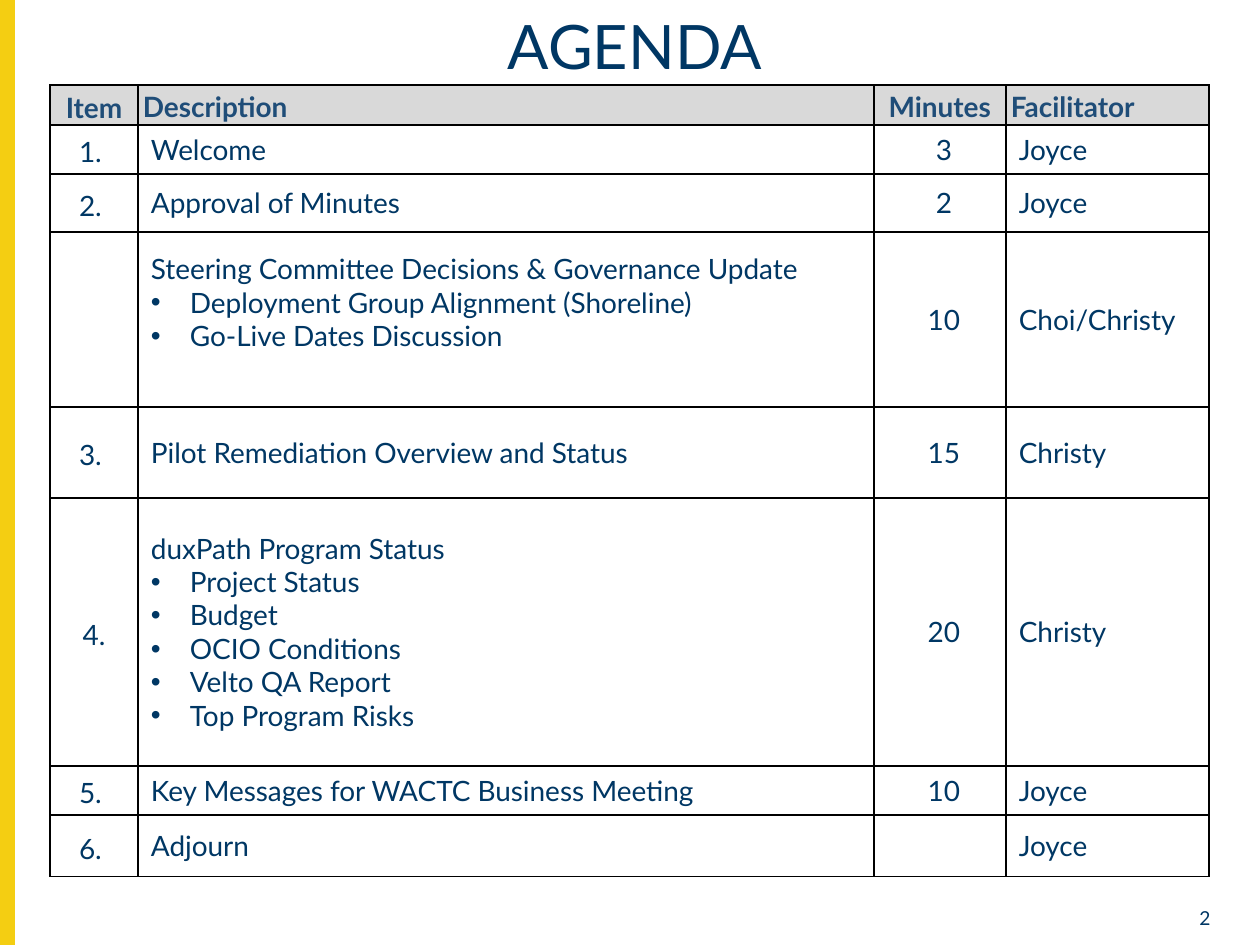
from lxml.etree import SubElement
from pptx import Presentation
from pptx.dml.color import RGBColor
from pptx.enum.shapes import MSO_SHAPE as SHAPE
from pptx.enum.text import MSO_ANCHOR as ANCHOR, PP_ALIGN as ALIGN
from pptx.oxml.ns import qn
from pptx.util import Emu, Pt

EMU_PER_PX = 914400 / 126
NAVY = "003764"
YELLOW = "F4CE12"
HEADER = {"size": Pt(16), "name": "Lato", "bold": True, "color": "1F4D78"}
BODY = {"size": Pt(16), "name": "Lato", "bold": False, "color": NAVY}
TITLE = {"size": Pt(35), "name": "Lato", "color": NAVY}
NUMBER = {"size": Pt(11), "name": "Lato", "color": NAVY}


def px(*lengths):
    return [Emu(round(n * EMU_PER_PX)) for n in lengths]


def write(p, text, fmt, **para):
    r = p.add_run()
    r.text = text
    for key, value in fmt.items():
        if key == "color":
            r.font.color.rgb = RGBColor.from_string(value)
        else:
            setattr(r.font, key, value)
    for key, value in para.items():
        setattr(p, key, value)


prs = Presentation()
prs.slide_width, prs.slide_height = px(1260, 945)
s = prs.slides.add_slide(prs.slide_layouts[5])

bar = s.shapes.add_shape(SHAPE.RECTANGLE, *px(0, 0, 14, 945))
bar.shadow.inherit = False
bar.fill.solid()
bar.fill.fore_color.rgb = RGBColor.from_string(YELLOW)
bar.line.color.rgb = RGBColor.from_string(YELLOW)
bar.line.width = Pt(1)

title = s.shapes.title
title.left, title.top, title.width, title.height = px(63, 10, 1144, 108)
title.text_frame.vertical_anchor = ANCHOR.TOP
write(title.text_frame.paragraphs[0], "AGENDA", TITLE,
      alignment=ALIGN.CENTER, line_spacing=0.9)

number = s.shapes.add_textbox(*px(1160, 900, 63, 26))
number.text_frame.word_wrap = True
write(number.text_frame.paragraphs[0], "2", NUMBER, alignment=ALIGN.RIGHT)

agenda = [
    ("Item", ["Description"], "Minutes", "Facilitator"),
    ("1. ", ["Welcome"], "3", "Joyce"),
    ("2. ", ["Approval of Minutes"], "2", "Joyce"),
    ("", ["Steering Committee Decisions & Governance Update",
          "Deployment Group Alignment (Shoreline)",
          "Go-Live Dates Discussion"], "10", "Choi/Christy"),
    ("3. ", ["Pilot Remediation Overview and Status"], "15", "Christy"),
    ("4.", ["duxPath Program Status", "Project Status", "Budget",
            "OCIO Conditions", "Velto QA Report", "Top Program Risks"],
     "20", "Christy"),
    ("5. ", ["Key Messages for WACTC Business Meeting"], "10", "Joyce"),
    ("6. ", ["Adjourn"], "", "Joyce"),
]
col_widths = [88, 736, 132, 203]
row_heights = [40, 49, 58, 175, 91, 268, 49, 62]

frame = s.shapes.add_table(len(agenda), len(col_widths),
                           *px(50, 85, sum(col_widths), sum(row_heights)))
table = frame.table
table.first_row = table.horz_banding = False
for col, width in zip(table.columns, px(*col_widths)):
    col.width = width
for row, height in zip(table.rows, px(*row_heights)):
    row.height = height

for i, entry in enumerate(agenda):
    for j, content in enumerate(entry):
        cell = table.cell(i, j)
        lines = content if j == 1 else [content]
        header, item = i == 0, j == 0
        left = 5 if header or item else 13
        bottom = 34 if i == 3 and j == 1 else 0
        cell.margin_left, cell.margin_top, cell.margin_right, cell.margin_bottom = px(left, 0, 5, bottom)
        cell.vertical_anchor = ANCHOR.TOP if header and not item else ANCHOR.MIDDLE

        tcPr = cell._tc.get_or_add_tcPr()
        for side in ("a:lnL", "a:lnR", "a:lnT", "a:lnB"):
            ln = SubElement(tcPr, qn(side), w=str(Pt(1)))
            SubElement(SubElement(ln, qn("a:solidFill")), qn("a:srgbClr"), val="000000")
        if header:
            cell.fill.solid()
            cell.fill.fore_color.rgb = RGBColor.from_string("D9D9D9")
        else:
            cell.fill.background()

        tf = cell.text_frame
        for k, line in enumerate(lines):
            if not line:
                continue
            p = tf.add_paragraph() if k else tf.paragraphs[0]
            para = {"alignment": ALIGN.CENTER if j in (0, 2) else ALIGN.LEFT}
            if header:
                para.update(line_spacing=1.15, space_before=Pt(2))
            elif item:
                para.update(line_spacing=1.15, space_after=Pt(2))
            write(p, line, HEADER if header else BODY, **para)
            if k:
                pPr = p._p.get_or_add_pPr()
                indent = px(39)[0]
                pPr.set("marL", str(indent))
                pPr.set("indent", str(-indent))
                SubElement(pPr, qn("a:buFont"), typeface="Arial")
                SubElement(pPr, qn("a:buChar"), char="•")

prs.save("out.pptx")
